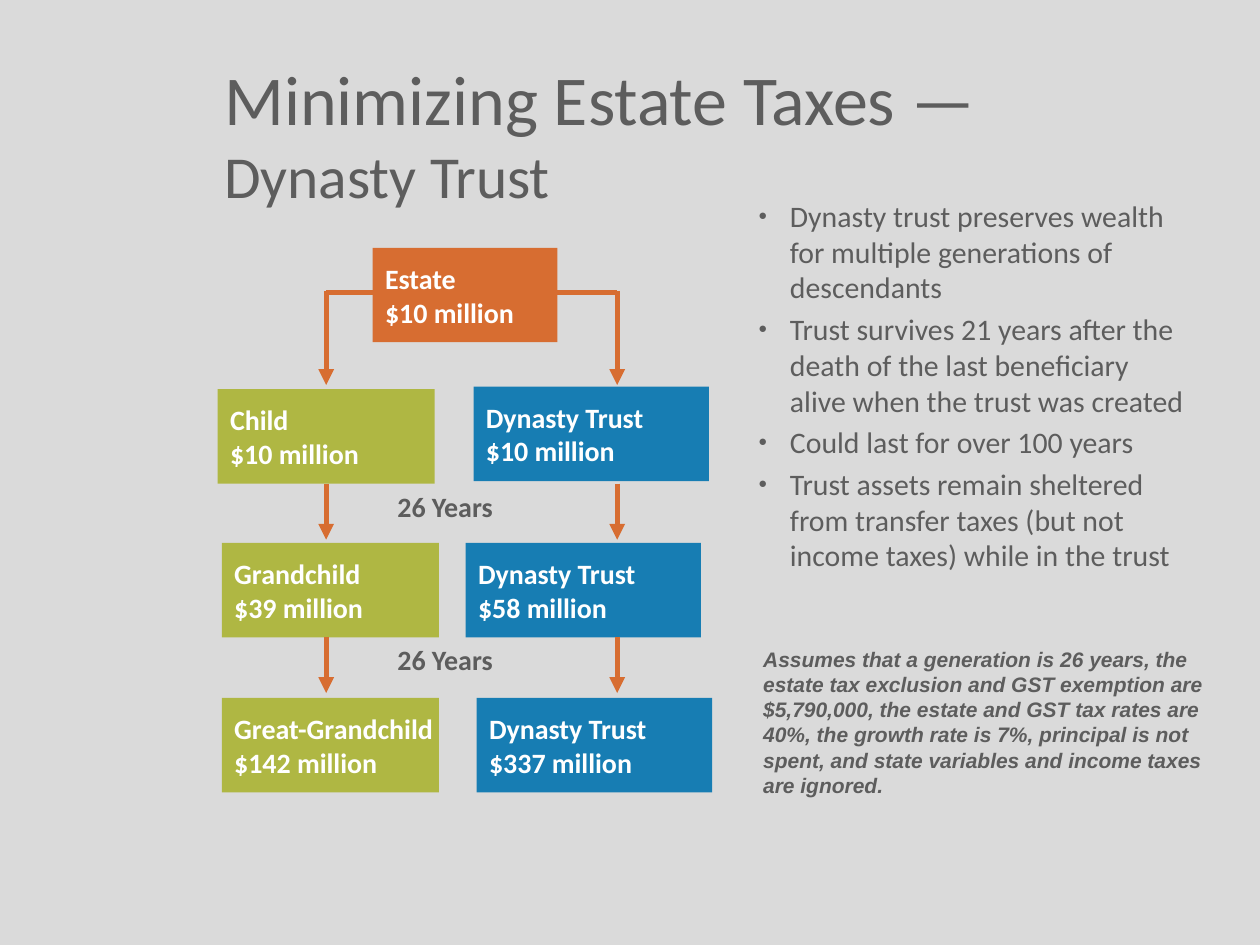
"""Build the dynasty trust slide: a transfer diagram beside explanatory bullets."""
from lxml import etree
from pptx import Presentation
from pptx import util as u
from pptx.dml.color import RGBColor
from pptx.enum import shapes, text
from pptx.oxml.ns import qn

COLORS = {"back": "DADADA", "body": "5D5D5D", "white": "FFFFFF",
          "estate": "D76D31", "heir": "AFB743", "trust": "177DB3"}
TITLE = [("Minimizing Estate Taxes —", 40), ("Dynasty Trust", 34)]
BULLETS = [
    "Dynasty trust preserves wealth for multiple generations of descendants",
    "Trust survives 21 years after the death of the last beneficiary alive when the trust was created",
    "Could last for over 100 years",
    "Trust assets remain sheltered from transfer taxes (but not income taxes) while in the trust",
]
ASSUMPTIONS = (
    "Assumes that a generation is 26 years, the estate tax exclusion and GST exemption are "
    "$5,790,000, the estate and GST tax rates are 40%, the growth rate is 7%, principal is not "
    "spent, and state variables and income taxes are ignored."
)
INTERVAL = "26 Years"
BOX_HEIGHT = 54
WIDTHS = {"estate": 105.5, "heir": 124, "trust": 134.5}
# name, amount, kind, left, top
HOLDINGS = [
    ("Estate", "$10 million", "estate", 213, 141.6),
    ("Child", "$10 million", "heir", 124.4, 222.4),
    ("Grandchild", "$39 million", "heir", 126.8, 310.2),
    ("Great-Grandchild", "$142 million", "heir", 126.8, 398.8),
    ("Dynasty Trust", "$10 million", "trust", 270.6, 221),
    ("Dynasty Trust", "$58 million", "trust", 266.1, 310.2),
    ("Dynasty Trust", "$337 million", "trust", 272.4, 398.8),
]
HEIR_X, TRUST_X, BRANCH_Y = 186.4, 352.7, 167
ARROW_SPANS = [(166.2, 220), (276.4, 308.4), (363.8, 396)]
LABEL_TOPS = [276.4, 363.8]


def color(name):
    return RGBColor.from_string(COLORS[name])


def place(shape, left, top, width, height):
    shape.left, shape.top, shape.width, shape.height = map(u.Pt, (left, top, width, height))


def style(font, size, name="body", face="Calibri", bold=None, italic=None):
    font.size, font.name, font.bold, font.italic = u.Pt(size), face, bold, italic
    font.color.rgb = color(name)


def add_title(page):
    title = page.shapes.title
    place(title, 121, 28, 575, 96)
    title.text_frame.auto_size = text.MSO_AUTO_SIZE.NONE
    title.text_frame.vertical_anchor = text.MSO_ANCHOR.MIDDLE
    para = title.text_frame.paragraphs[0]
    para.alignment = text.PP_ALIGN.LEFT
    for index, (words, size) in enumerate(TITLE):
        if index:
            para.add_line_break()
        span = para.add_run()
        span.text = words
        style(span.font, size)


def add_bullets(page):
    body = page.placeholders[1]
    place(body, 426.2, 109.4, 262, 281)
    frame = body.text_frame
    frame.text = "\n".join(BULLETS)
    frame.auto_size = text.MSO_AUTO_SIZE.NONE
    for index, para in enumerate(frame.paragraphs):
        props = para._p.get_or_add_pPr()
        props.set("marL", str(u.Pt(18)))
        props.set("indent", str(u.Pt(-18)))
        tint = etree.SubElement(props, qn("a:buClr"))
        etree.SubElement(tint, qn("a:srgbClr"), val=COLORS["body"])
        etree.SubElement(props, qn("a:buSzPct"), val="50000")
        etree.SubElement(props, qn("a:buChar"), char="●")
        para.space_before = u.Pt(3.4 if index else 0)
        style(para.font, 17)


def add_line(page, start, end, arrow=False):
    ends = map(u.Pt, (*start, *end))
    line = page.shapes.add_connector(shapes.MSO_CONNECTOR.STRAIGHT, *ends)
    line.line.color.rgb = color("estate")
    line.line.width = u.Pt(3)
    if arrow:
        etree.SubElement(line.line._get_or_add_ln(), qn("a:tailEnd"), type="triangle")
    etree.SubElement(line._element.spPr, qn("a:effectLst"))


def add_holding(page, name, amount, kind, left, top):
    frame_size = map(u.Pt, (left, top, WIDTHS[kind], BOX_HEIGHT))
    box = page.shapes.add_shape(shapes.MSO_SHAPE.RECTANGLE, *frame_size)
    box.shadow.inherit = False
    box.fill.solid()
    box.fill.fore_color.rgb = color(kind)
    box.line.fill.background()
    frame = box.text_frame
    frame.text = f"{name}\n{amount}"
    frame.word_wrap = False
    frame.vertical_anchor = text.MSO_ANCHOR.MIDDLE
    for para in frame.paragraphs:
        para.alignment = text.PP_ALIGN.LEFT
        style(para.font, 16, "white", bold=True)


def add_text(page, words, bounds, size, **look):
    box = page.shapes.add_textbox(*map(u.Pt, bounds))
    box.text_frame.word_wrap = True
    box.text_frame.text = words
    style(box.text_frame.paragraphs[0].font, size, bold=True, **look)


def main():
    deck = Presentation()
    deck.slide_width, deck.slide_height = u.Pt(720), u.Pt(540)
    page = deck.slides.add_slide(deck.slide_layouts[1])
    page.background.fill.solid()
    page.background.fill.fore_color.rgb = color("back")
    add_title(page)
    add_bullets(page)
    for holding in HOLDINGS:
        add_holding(page, *holding)
    estate_left = HOLDINGS[0][3]
    estate_right = estate_left + WIDTHS["estate"]
    for edge, column in ((estate_left, HEIR_X), (estate_right, TRUST_X)):
        add_line(page, (edge, BRANCH_Y), (column, BRANCH_Y))
        for top, bottom in ARROW_SPANS:
            add_line(page, (column, top), (column, bottom), arrow=True)
    for top in LABEL_TOPS:
        add_text(page, INTERVAL, (220, top, 106, 26.6), 16)
    add_text(page, ASSUMPTIONS, (429, 365.8, 281, 94.3), 12, face="Arial", italic=True)
    deck.save("out.pptx")


if __name__ == "__main__":
    main()
